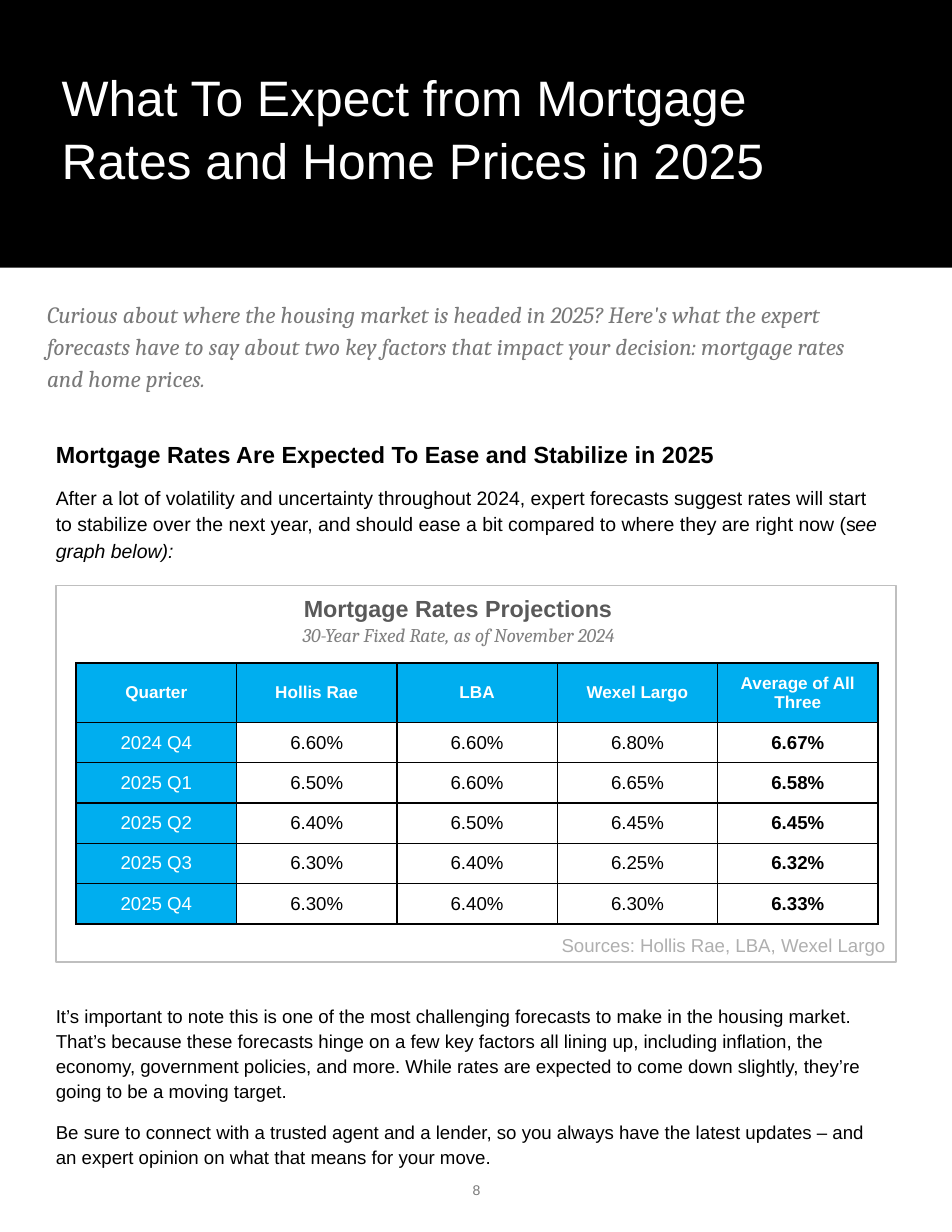
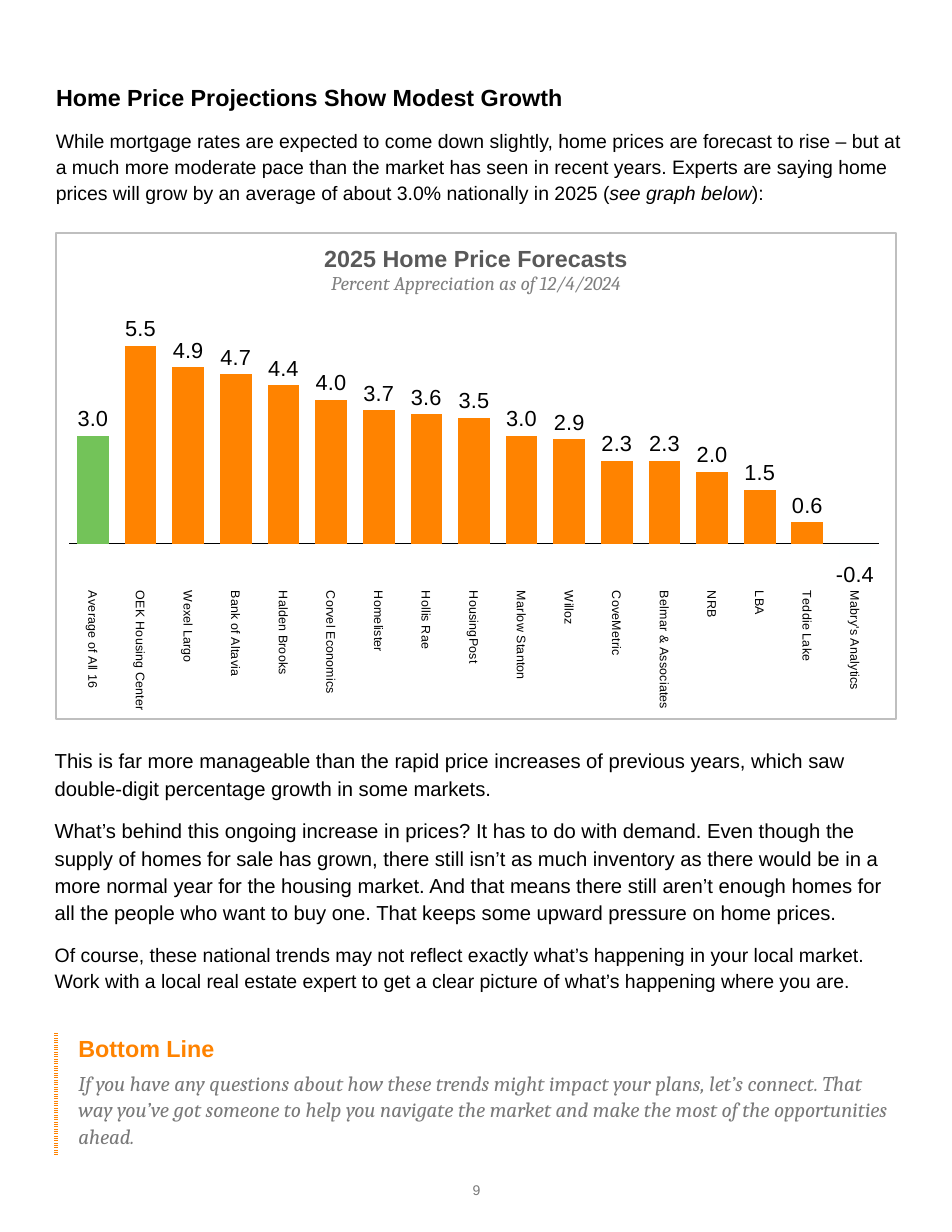
from lxml.etree import SubElement
from pptx import Presentation
from pptx.chart.data import CategoryChartData
from pptx.dml.color import RGBColor
from pptx.enum.chart import XL_CHART_TYPE, XL_LABEL_POSITION, XL_TICK_LABEL_POSITION, XL_TICK_MARK
from pptx.enum.shapes import MSO_SHAPE
from pptx.enum.text import MSO_ANCHOR, MSO_AUTO_SIZE, PP_ALIGN
from pptx.oxml.ns import qn
from pptx.util import Inches, Pt

BLACK = RGBColor(0x00, 0x00, 0x00)
WHITE = RGBColor(0xFF, 0xFF, 0xFF)
OFF_WHITE = RGBColor(0xFE, 0xFF, 0xFF)
BLUE = RGBColor(0x00, 0xAE, 0xEF)
ORANGE = RGBColor(0xFF, 0x83, 0x00)
GREEN = RGBColor(0x73, 0xC3, 0x59)
FRAME_GRAY = RGBColor(0xBF, 0xBF, 0xBF)
SOURCE_GRAY = RGBColor(0xAF, 0xAF, 0xAF)
CAPTION_GRAY = RGBColor(0x59, 0x59, 0x59)
SUBTITLE_GRAY = RGBColor(0x80, 0x80, 0x80)
INTRO_GRAY = RGBColor(0x79, 0x79, 0x79)

# Shared text styles
BANNER = dict(size=Pt(32), name="Arial", bold=False, color=WHITE)
HEADING = dict(size=Pt(15), name="Arial", bold=True, color=BLACK)
BODY = dict(size=Pt(12.5), name="Arial", color=BLACK)
BODY_ITALIC = {**BODY, "italic": True}
BODY_SMALL = {**BODY, "size": Pt(12)}
BODY_LARGE = {**BODY, "size": Pt(13)}
INTRO = dict(size=Pt(15), name="Cambria", italic=True, color=INTRO_GRAY)
CAPTION = {**HEADING, "color": CAPTION_GRAY}
SUBTITLE = dict(size=Pt(12.5), name="Cambria", italic=True, color=SUBTITLE_GRAY)
SOURCE = {**BODY_SMALL, "color": SOURCE_GRAY}
PAGE_NUMBER = dict(size=Pt(9), name="Arial", color=INTRO_GRAY)
CENTERED = dict(alignment=PP_ALIGN.CENTER)
PROSE = dict(alignment=PP_ALIGN.LEFT, line_spacing=1.12, space_after=Pt(10))


def write(frame, paragraphs, layout, anchor=MSO_ANCHOR.TOP):
    """Fill a frame; each paragraph is a list of (text, style) spans."""
    frame.word_wrap = True
    frame.vertical_anchor = anchor
    for index, spans in enumerate(paragraphs):
        para = frame.add_paragraph() if index else frame.paragraphs[0]
        for key, value in layout.items():
            setattr(para, key, value)
        for text, style in spans:
            span = para.add_run()
            span.text = text
            for key, value in style.items():
                if key == "color":
                    span.font.color.rgb = value
                else:
                    setattr(span.font, key, value)


def add_border(cell, sides, color, width, dash="solid"):
    """Draw the named cell sides (L, R, T, B) ahead of the cell's fill."""
    properties = cell._tc.get_or_add_tcPr()
    for position, side in enumerate(sides):
        line = properties.makeelement(qn(f"a:ln{side}"), {"w": str(Pt(width))})
        fill = SubElement(line, qn("a:solidFill"))
        SubElement(fill, qn("a:srgbClr"), val=str(color))
        SubElement(line, qn("a:prstDash"), val=dash)
        properties.insert(position, line)


deck = Presentation()
deck.slide_width, deck.slide_height = Inches(8.5), Inches(11)
rates_page, prices_page = [deck.slides.add_slide(deck.slide_layouts[5]) for _ in range(2)]

# Titles
titles = [
    (rates_page, "What To Expect from Mortgage Rates and Home Prices in 2025",
     (0, 0, 8.5, 2.39), (0.55, 0.57), BANNER, 1.05),
    (prices_page, "Home Price Projections Show Modest Growth",
     (0.4, 0.66, 7.75, 0.4), (0.1, 0.05), HEADING, 1.12),
]
for page, text, at, (side, top), style, spacing in titles:
    title = page.shapes.title
    title.left, title.top, title.width, title.height = map(Inches, at)
    frame = title.text_frame
    frame.auto_size = MSO_AUTO_SIZE.NONE
    frame.margin_left = frame.margin_right = Inches(side)
    frame.margin_top = Inches(top)
    write(frame, [[(text, style)]], dict(alignment=PP_ALIGN.LEFT, line_spacing=spacing))
banner = rates_page.shapes.title
banner.fill.solid()
banner.fill.fore_color.rgb = BLACK

# Panel frames, captions and page numbers
panels = [
    (rates_page, "8", (5.23, 3.36),
     "Mortgage Rates Projections", (2.38, 5.28, 3.42, 0.32),
     "30-Year Fixed Rate, as of November 2024", (0.35, 5.51, 7.49, 0.32)),
    (prices_page, "9", (2.08, 4.34),
     "2025 Home Price Forecasts", (1.25, 2.16, 6, 0.41),
     "Percent Appreciation as of 12/4/2024", (1.25, 2.32, 6, 0.41)),
]
for page, number, (top, height), caption, caption_at, subtitle, subtitle_at in panels:
    panel = page.shapes.add_shape(
        MSO_SHAPE.RECTANGLE, Inches(0.5), Inches(top), Inches(7.5), Inches(height))
    panel.shadow.inherit = False
    panel.fill.background()
    panel.line.color.rgb = FRAME_GRAY
    panel.line.width = Pt(1)
    box = page.shapes.add_textbox(*map(Inches, caption_at))
    write(box.text_frame, [[(caption, CAPTION)]], {**CENTERED, "line_spacing": 0.9})
    box = page.shapes.add_textbox(*map(Inches, subtitle_at))
    write(box.text_frame, [[(subtitle, SUBTITLE)]], CENTERED, MSO_ANCHOR.MIDDLE)
    box = page.shapes.add_textbox(*map(Inches, (3.77, 10.25, 0.97, 0.75)))
    write(box.text_frame, [[(number, PAGE_NUMBER)]], CENTERED, MSO_ANCHOR.MIDDLE)

# Body text
texts = [
    (rates_page, (0.4, 3.85, 7.59, 1.3), [
        [("Mortgage Rates Are Expected To Ease and Stabilize in 2025", HEADING)],
        [("After a lot of volatility and uncertainty throughout 2024, expert forecasts suggest "
          "rates will start to stabilize over the next year, and should ease a bit compared to "
          "where they are right now (s", BODY), ("ee graph below):", BODY_ITALIC)]]),
    (rates_page, (0.4, 8.9, 7.59, 1.6), [
        [("It’s important to note this is one of the most challenging forecasts to make in the "
          "housing market. That’s because these forecasts hinge on a few key factors all lining "
          "up, including inflation, the economy, government policies, and more. While rates are "
          "expected to come down slightly, they’re going to be a moving target.", BODY_SMALL)],
        [("Be sure to connect with a trusted agent and a lender, so you always have the latest "
          "updates – and an expert opinion on what that means for your move.", BODY_SMALL)]]),
    (prices_page, (0.4, 1.08, 7.75, 0.9), [
        [("While mortgage rates are expected to come down slightly, home prices are forecast to "
          "rise – but at a much more moderate pace than the market has seen in recent years. "
          "Experts are saying home prices will grow by an average of about 3.0% nationally in "
          "2025 (", BODY), ("see graph below", BODY_ITALIC), ("):", BODY)]]),
    (prices_page, (0.39, 6.61, 7.61, 2.3), [
        [("This is far more manageable than the rapid price increases of previous years, which "
          "saw double-digit percentage growth in some markets.", BODY_LARGE)],
        [("What’s behind this ongoing increase in prices? It has to do with demand. Even though "
          "the supply of homes for sale has grown, there still isn’t as much inventory as there "
          "would be in a more normal year for the housing market. And that means there still "
          "aren’t enough homes for all the people who want to buy one. That keeps some upward "
          "pressure on home prices.", BODY_LARGE)],
        [("Of course, these national trends may not reflect exactly what’s happening in your "
          "local market. Work with a local real estate expert to get a clear picture of what’s "
          "happening where you are.", BODY)]]),
]
for page, at, paragraphs in texts:
    box = page.shapes.add_textbox(*map(Inches, at))
    write(box.text_frame, paragraphs, PROSE)

# Introduction under the banner
box = rates_page.shapes.add_textbox(*map(Inches, (0.42, 2.3, 7.33, 1.16)))
frame = box.text_frame
frame.margin_left = frame.margin_right = frame.margin_bottom = 0
frame.margin_top = Inches(0.35)
write(frame, [[(
    "Curious about where the housing market is headed in 2025? Here's what the expert forecasts "
    "have to say about two key factors that impact your decision: mortgage rates and home prices.",
    INTRO)]], {**PROSE, "line_spacing": 1.14})

# Mortgage rate table
rates = [
    ("Quarter", "Hollis Rae", "LBA", "Wexel Largo", "Average of All Three"),
    ("2024 Q4", "6.60%", "6.60%", "6.80%", "6.67%"),
    ("2025 Q1", "6.50%", "6.60%", "6.65%", "6.58%"),
    ("2025 Q2", "6.40%", "6.50%", "6.45%", "6.45%"),
    ("2025 Q3", "6.30%", "6.40%", "6.25%", "6.32%"),
    ("2025 Q4", "6.30%", "6.40%", "6.30%", "6.33%"),
]
table = rates_page.shapes.add_table(6, 5, *map(Inches, (0.68, 5.92, 7.16, 2.34))).table
for index, values in enumerate(rates):
    table.rows[index].height = Inches(0.36 if index else 0.53)
    for column, value in enumerate(values):
        cell = table.cell(index, column)
        is_label = index == 0 or column == 0
        cell.vertical_anchor = MSO_ANCHOR.MIDDLE
        cell.fill.solid()
        cell.fill.fore_color.rgb = BLUE if is_label else WHITE
        add_border(cell, "LRTB", BLACK, 1)
        style = dict(size=Pt(12 if index else 11), name="Arial",
                     bold=index == 0 or column == 4, color=WHITE if is_label else BLACK)
        write(cell.text_frame, [[(value, style)]], CENTERED)

box = rates_page.shapes.add_textbox(*map(Inches, (4.34, 8.31, 3.57, 0.34)))
box.text_frame.margin_left = box.text_frame.margin_right = 0
write(box.text_frame, [[("Sources: Hollis Rae, LBA, Wexel Largo", SOURCE)]],
      dict(alignment=PP_ALIGN.RIGHT, line_spacing=0.9))

# Home price chart
forecasts = {
    "Average of All 16": 3.0, "OEK Housing Center": 5.5, "Wexel Largo": 4.9,
    "Bank of Altavia": 4.7, "Halden Brooks": 4.4, "Corvel Economics": 4.0,
    "Homelister": 3.7, "Hollis Rae": 3.6, "HousingPost": 3.5, "Marlow Stanton": 3.0,
    "Willoz": 2.9, "CoveMetric": 2.3, "Belmar & Associates": 2.3, "NRB": 2.0,
    "LBA": 1.5, "Teddie Lake": 0.6, "Mabry's Analytics": -0.4,
}
data = CategoryChartData(number_format="0.0")
data.categories = list(forecasts)
data.add_series("Series 1", list(forecasts.values()))
chart = prices_page.shapes.add_chart(
    XL_CHART_TYPE.COLUMN_CLUSTERED, *map(Inches, (0.49, 2.56, 7.5, 4.01)), data).chart
chart.has_legend = chart.has_title = False
chart.font.size, chart.font.name = Pt(10), "Arial"
chart.font.color.rgb = BLACK

value_axis = chart.value_axis
value_axis.minimum_scale, value_axis.maximum_scale = -1, 6
value_axis.has_major_gridlines = value_axis.visible = False
category_axis = chart.category_axis
category_axis.major_tick_mark = category_axis.minor_tick_mark = XL_TICK_MARK.NONE
category_axis.tick_label_position = XL_TICK_LABEL_POSITION.LOW
category_axis.format.line.color.rgb = BLACK
category_axis.format.line.width = Pt(0.75)
category_axis.tick_labels.font.size = Pt(8)
category_axis.tick_labels.font.name = "Arial"
category_axis.tick_labels.font.color.rgb = BLACK
label_body = category_axis._element.find(qn("c:txPr")).find(qn("a:bodyPr"))
label_body.set("rot", "5400000")
label_body.set("vert", "horz")

plot = chart.plots[0]
plot.gap_width, plot.overlap, plot.vary_by_categories = 50, -27, False
series = plot.series[0]
series.invert_if_negative = False
series.format.fill.solid()
series.format.fill.fore_color.rgb = ORANGE
for position, color in ((0, GREEN), (len(forecasts) - 1, OFF_WHITE)):
    fill = series.points[position].format.fill
    fill.solid()
    fill.fore_color.rgb = color
labels = series.data_labels
labels.show_value, labels.position = True, XL_LABEL_POSITION.OUTSIDE_END
labels.number_format, labels.number_format_is_linked = "0.0", False
labels.font.size, labels.font.name = Pt(14), "Arial"
labels.font.color.rgb = BLACK

# Fixed plot area inside the chart
plot_area = chart._chartSpace.chart.plotArea
for old_layout in plot_area.findall(qn("c:layout")):
    plot_area.remove(old_layout)
layout = plot_area.makeelement(qn("c:layout"), {})
plot_area.insert(0, layout)
manual = SubElement(layout, qn("c:manualLayout"))
for tag, value in dict(layoutTarget="inner", xMode="edge", yMode="edge",
                       x="0.017", y="0.091", w="0.964", h="0.562").items():
    SubElement(manual, qn(f"c:{tag}"), val=value)

# Bottom line with dotted edge
table = prices_page.shapes.add_table(1, 1, *map(Inches, (0.5, 9.23, 7.5, 1.07))).table
table.first_row = table.horz_banding = False
cell = table.cell(0, 0)
cell.margin_left = Inches(0.2)
cell.margin_top = cell.margin_right = cell.margin_bottom = 0
cell.fill.background()
add_border(cell, "L", ORANGE, 2.25, "sysDot")
write(cell.text_frame, [
    [("Bottom Line", {**HEADING, "color": ORANGE})],
    [("If you have any questions about how these trends might impact your plans, let’s connect. "
      "That way you’ve got someone to help you navigate the market and make the most of the "
      "opportunities ahead.", {**INTRO, "size": Pt(13.5)})],
], dict(line_spacing=1.1, space_after=Pt(5)))

deck.save("out.pptx")
